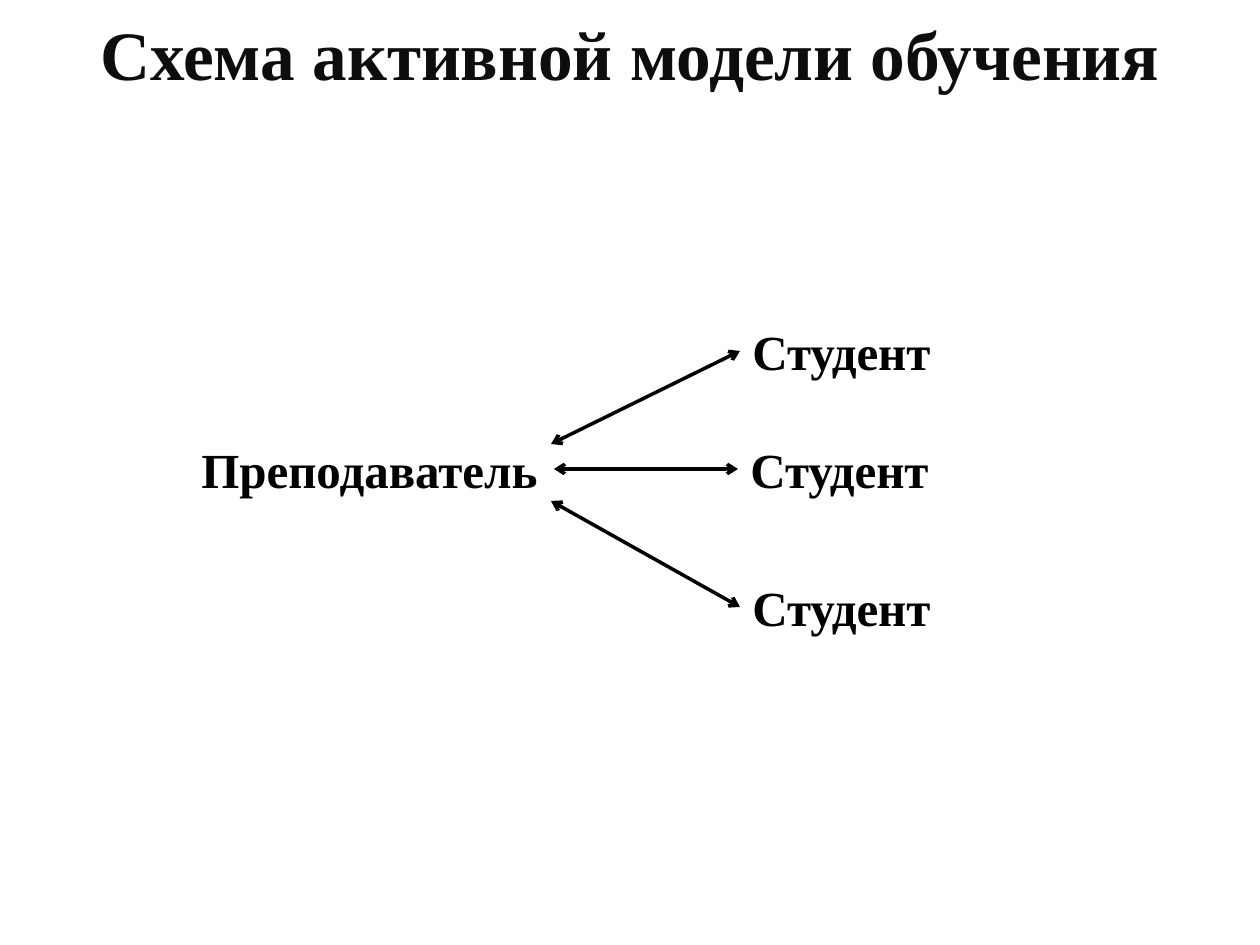
"""Build a slide showing two-way links between a teacher and three students."""
from dataclasses import dataclass
from typing import Optional

from pptx import Presentation
from pptx import util as u
from pptx.dml import color
from pptx.enum import shapes, text
from pptx.oxml import ns, xmlchemy

PX = u.Inches(1) // 126
FONT = "Times New Roman"
COLORS = {"title": "0D0D0D", "label": "000000", "arrow": "000000"}
LABEL_HEIGHT = 72
RIGHT_SIDE, LEFT_SIDE = 3, 1


@dataclass(frozen=True)
class Label:
    wording: str
    left: int
    top: int
    width: int


@dataclass(frozen=True)
class StudentLink:
    student: Label
    start: Optional[tuple[int, int]] = None


TEACHER = Label("Преподаватель", 189, 433, 365)
LINKS = [
    StudentLink(Label("Студент", 738, 433, 205)),
    StudentLink(Label("Студент", 740, 315, 205), (551, 444)),
    StudentLink(Label("Студент", 740, 571, 205), (551, 501)),
]


def add_bold_run(paragraph, wording: str, size: float, color_name: str) -> None:
    run = paragraph.add_run()
    run.text = wording
    run.font.name = FONT
    run.font.size = u.Pt(size)
    run.font.bold = True
    run.font.color.rgb = color.RGBColor.from_string(COLORS[color_name])


def add_title(slide, wording: str) -> None:
    shape = slide.shapes.add_textbox(63 * PX, 38 * PX, 1134 * PX, 100 * PX)
    frame = shape.text_frame
    frame.word_wrap = True
    frame.vertical_anchor = text.MSO_ANCHOR.MIDDLE
    frame.margin_top = 0
    frame.margin_bottom = 71 * PX
    paragraph = frame.paragraphs[0]
    paragraph.alignment = text.PP_ALIGN.CENTER
    add_bold_run(paragraph, wording, 39.6, "title")


def add_label(slide, label: Label):
    shape = slide.shapes.add_textbox(
        label.left * PX, label.top * PX, label.width * PX, LABEL_HEIGHT * PX
    )
    frame = shape.text_frame
    frame.word_wrap = False
    frame.auto_size = text.MSO_AUTO_SIZE.SHAPE_TO_FIT_TEXT
    add_bold_run(frame.paragraphs[0], label.wording, 28, "label")
    return shape


def add_double_arrow(slide, teacher, student, start: Optional[tuple[int, int]]) -> None:
    left, top = start or (0, 0)
    connector = slide.shapes.add_connector(
        shapes.MSO_CONNECTOR.STRAIGHT,
        left * PX, top * PX, student.left, student.top + student.height // 2,
    )
    if start is None:
        connector.begin_connect(teacher, RIGHT_SIDE)
    connector.end_connect(student, LEFT_SIDE)
    connector.line.width = u.Pt(2)
    connector.line.color.rgb = color.RGBColor.from_string(COLORS["arrow"])
    line = connector.line._get_or_add_ln()
    for end in ("a:headEnd", "a:tailEnd"):
        arrowhead = xmlchemy.OxmlElement(end)
        arrowhead.set("type", "arrow")
        line.append(arrowhead)
    properties = connector._element.find(ns.qn("p:spPr"))
    properties.append(xmlchemy.OxmlElement("a:effectLst"))


def main() -> None:
    presentation = Presentation()
    presentation.slide_width = u.Inches(10)
    presentation.slide_height = u.Inches(7.5)
    slide = presentation.slides.add_slide(presentation.slide_layouts[6])
    add_title(slide, "Схема активной модели обучения")
    teacher = add_label(slide, TEACHER)
    students = [add_label(slide, link.student) for link in LINKS]
    for link, student in zip(LINKS, students):
        add_double_arrow(slide, teacher, student, link.start)
    presentation.save("out.pptx")


if __name__ == "__main__":
    main()
